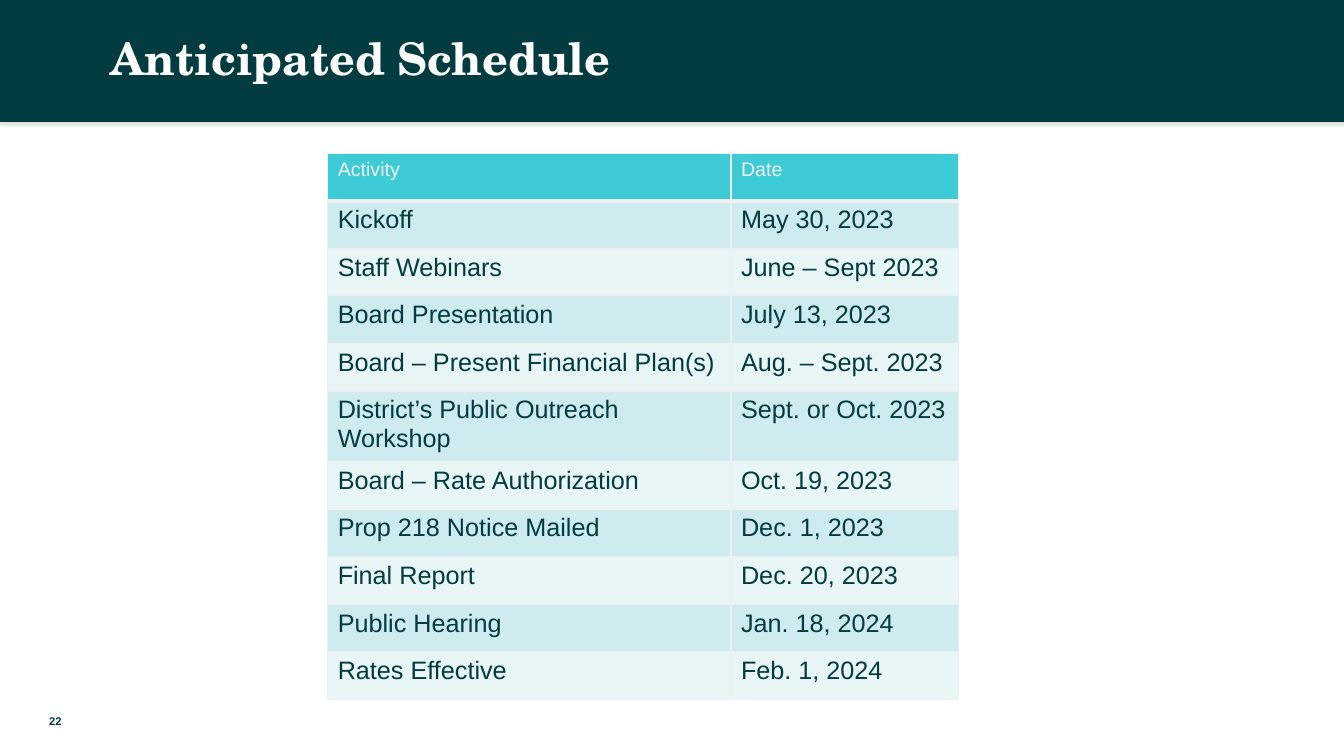
from dataclasses import dataclass

from lxml.etree import SubElement
from pptx import Presentation
from pptx.dml.color import RGBColor
from pptx.enum.shapes import MSO_SHAPE
from pptx.enum.text import MSO_ANCHOR, PP_ALIGN
from pptx.oxml.ns import qn
from pptx.util import Inches, Pt

TEAL, WHITE, PALE = "023B40", "FEFFFF", "F0F0F0"
HEADER_FILL = "3DCCD5"
BAND_FILLS = ("CEECEF", "E8F6F7")


@dataclass
class Milestone:
    activity: str
    date: str


@dataclass
class Label:
    text: str
    box: tuple[float, float, float, float]
    size: float
    font: str
    color: str
    align: PP_ALIGN = PP_ALIGN.LEFT
    anchor: MSO_ANCHOR = MSO_ANCHOR.TOP
    insets: tuple[float, float, float, float] = (0.1, 0.05, 0.1, 0.05)


HEADINGS = Milestone("Activity", "Date")
MILESTONES = [
    Milestone("Kickoff", "May 30, 2023"),
    Milestone("Staff Webinars", "June – Sept 2023"),
    Milestone("Board Presentation", "July 13, 2023"),
    Milestone("Board – Present Financial Plan(s)", "Aug. – Sept. 2023"),
    Milestone("District’s Public Outreach Workshop", "Sept. or Oct. 2023"),
    Milestone("Board – Rate Authorization", "Oct. 19, 2023"),
    Milestone("Prop 218 Notice Mailed", "Dec. 1, 2023"),
    Milestone("Final Report", "Dec. 20, 2023"),
    Milestone("Public Hearing", "Jan. 18, 2024"),
    Milestone("Rates Effective", "Feb. 1, 2024"),
]
LABELS = [
    Label("Anticipated Schedule", (1.1, 0.09, 11.13, 1.37), 32, "TeX Gyre Schola",
          WHITE, insets=(0, 0.21, 0, 0)),
    Label("22", (0, 6.95, 1.1, 0.4), 8, "Arial", TEAL,
          PP_ALIGN.CENTER, MSO_ANCHOR.MIDDLE),
]


def rgb(color: str) -> RGBColor:
    return RGBColor.from_string(color)


def style_paragraph(paragraph, size: float, font: str, color: str,
                    bold: bool = False) -> None:
    paragraph.font.size = Pt(size)
    paragraph.font.name = font
    paragraph.font.bold = bold
    paragraph.font.color.rgb = rgb(color)


def add_label(slide, label: Label) -> None:
    frame = slide.shapes.add_textbox(*map(Inches, label.box)).text_frame
    frame.word_wrap = True
    frame.vertical_anchor = label.anchor
    (frame.margin_left, frame.margin_top,
     frame.margin_right, frame.margin_bottom) = map(Inches, label.insets)
    paragraph = frame.paragraphs[0]
    paragraph.text = label.text
    paragraph.alignment = label.align
    style_paragraph(paragraph, label.size, label.font, label.color, bold=True)


def add_banner(slide) -> None:
    banner = slide.shapes.add_shape(
        MSO_SHAPE.RECTANGLE, Inches(-0.02), Inches(-0.04), Inches(13.37), Inches(1.25))
    banner.fill.solid()
    banner.fill.fore_color.rgb = rgb(TEAL)
    banner.line.fill.background()
    # Soft shadow straight below
    banner.shadow.inherit = False
    effects = banner.element.spPr.find(qn("a:effectLst"))
    shadow = SubElement(effects, qn("a:outerShdw"), blurRad=str(Pt(3)),
                        dist=str(Pt(1)), dir="5400000", rotWithShape="0")
    black = SubElement(shadow, qn("a:srgbClr"), val="000000")
    SubElement(black, qn("a:alpha"), val="15000")


def set_borders(cell, top: float, bottom: float) -> None:
    properties = cell._tc.get_or_add_tcPr()
    widths = {"a:lnL": 1, "a:lnR": 1, "a:lnT": top, "a:lnB": bottom}
    for position, (side, width) in enumerate(widths.items()):
        line = SubElement(properties, qn(side), w=str(Pt(width)))
        SubElement(SubElement(line, qn("a:solidFill")), qn("a:srgbClr"), val=PALE)
        properties.insert(position, line)


def add_schedule(slide) -> None:
    entries = [HEADINGS, *MILESTONES]
    schedule = slide.shapes.add_table(
        len(entries), 2, Inches(3.25), Inches(1.52), Inches(6.26), Inches(5.19)).table
    for column, width in zip(schedule.columns, (4, 2.26)):
        column.width = Inches(width)
    for index, entry in enumerate(entries):
        is_header = index == 0
        fill = HEADER_FILL if is_header else BAND_FILLS[(index - 1) % 2]
        for cell, text in zip(schedule.rows[index].cells, (entry.activity, entry.date)):
            cell.text = text
            cell.fill.solid()
            cell.fill.fore_color.rgb = rgb(fill)
            style_paragraph(cell.text_frame.paragraphs[0], 14 if is_header else 18,
                            "Arial", PALE if is_header else TEAL)
            set_borders(cell, top=3 if index == 1 else 1, bottom=3 if is_header else 1)


def main() -> None:
    deck = Presentation()
    deck.slide_width, deck.slide_height = Inches(13.33), Inches(7.5)
    slide = deck.slides.add_slide(deck.slide_layouts[6])
    slide.background.fill.solid()
    slide.background.fill.fore_color.rgb = rgb(WHITE)

    # Banner, title and page number
    add_banner(slide)
    for label in LABELS:
        add_label(slide, label)

    # Schedule table
    add_schedule(slide)
    deck.save("out.pptx")


if __name__ == "__main__":
    main()
